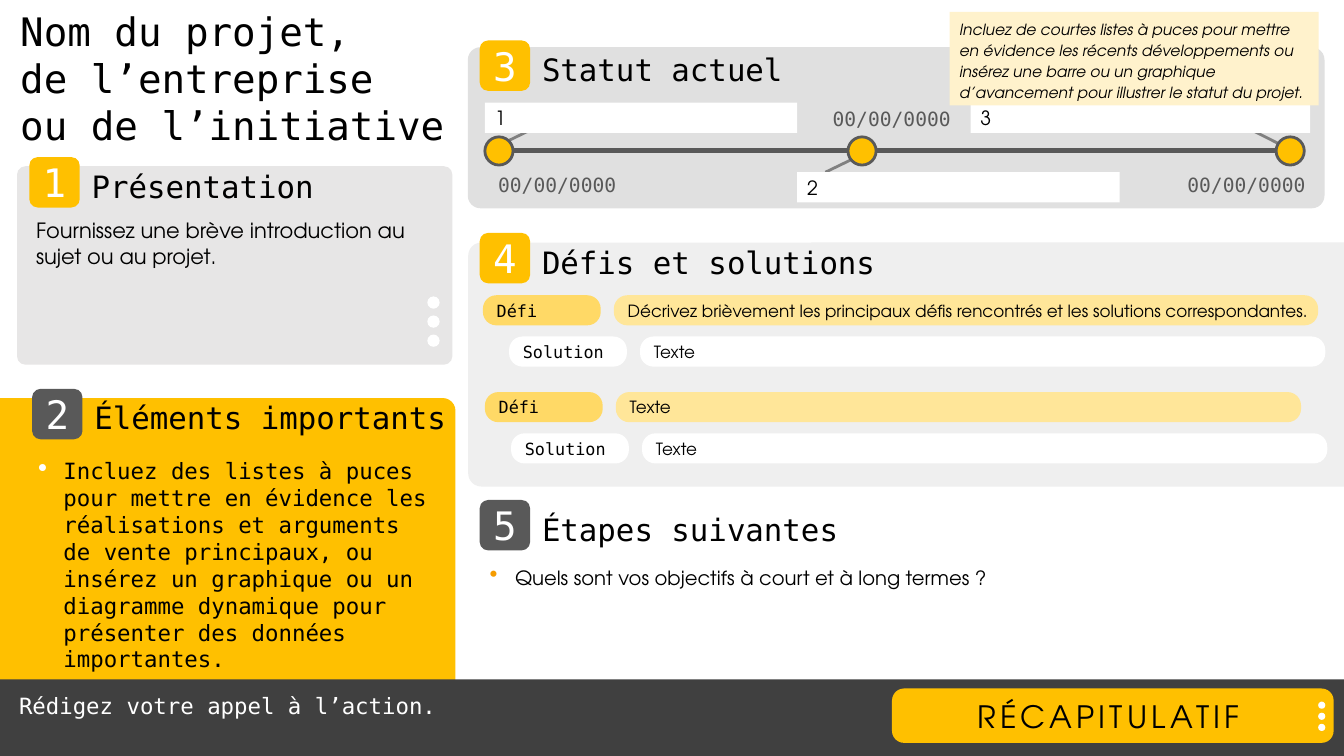
"""Build a one-page project summary slide."""
from lxml.etree import SubElement
from pptx import Presentation
from pptx.dml.color import RGBColor
from pptx.enum.shapes import MSO_CONNECTOR, MSO_SHAPE
from pptx.enum.text import MSO_ANCHOR, MSO_AUTO_SIZE, PP_ALIGN
from pptx.oxml.ns import qn
from pptx.util import Cm, Pt

MONO, SANS = "DejaVu Sans Mono", "TeX Gyre Adventor"
COLORS = {
    "black": "000000", "white": "FFFFFF", "yellow": "FFC000", "amber": "FFD966",
    "pale": "FFE699", "cream": "FFF2CC", "orange": "F59C00", "slate": "595959",
    "footer": "404040", "leader": "808080", "intro": "E7E6E6", "status": "E0E0E0",
    "challenges": "EFEFEF",
}
TITLE = "Nom du projet,\vde l’entreprise\vou de l’initiative"
INTRO = "Fournissez une brève introduction au sujet ou au projet."
HIGHLIGHT = ("Incluez des listes à puces pour mettre en évidence les réalisations et "
             "arguments de vente principaux, ou insérez un graphique ou un diagramme "
             "dynamique pour présenter des données importantes.")
NOTE = ("Incluez de courtes listes à puces pour mettre en évidence les récents "
        "développements ou insérez une barre ou un graphique d’avancement pour "
        "illustrer le statut du projet.")
NEXT_STEP = "Quels sont vos objectifs à court et à long termes ?"
CALL = "Rédigez votre appel à l’action."
BUTTON = "RÉCAPITULATIF"
DATE = "00/00/0000"
SECTIONS = [
    ("Présentation", 0.74, 3.96, "yellow"),
    ("Éléments importants", 0.81, 9.8, "slate"),
    ("Statut actuel", 12.09, 1.02, "yellow"),
    ("Défis et solutions", 12.09, 5.87, "yellow"),
    ("Étapes suivantes", 12.09, 12.6, "slate"),
]
MILESTONES = [
    {"label": "1", "x": 12.57, "box": (12.22, 2.59, 7.87, 0.76),
     "date": (12.09, 4.24), "leader": (12.37, 3.76, 13.36, 3.28)},
    {"label": "2", "x": 21.72, "box": (20.09, 4.34, 8.13, 0.76),
     "date": (20.52, 2.57), "leader": (20.8, 4.34, 21.79, 3.86)},
    {"label": "3", "x": 32.51, "box": (24.46, 2.59, 8.56, 0.76),
     "date": (29.46, 4.24), "leader": (32.54, 3.78, 31.55, 3.28)},
]
CHALLENGES = [
    (12.17, 7.44, 17.75, "Décrivez brièvement les principaux défis rencontrés et les "
                         "solutions correspondantes.", "Texte"),
    (12.22, 9.88, 17.27, "Texte", "Texte"),
]
DOTS = [(10.77, 7.47, 0.48, 0.31), (33.22, 17.68, 0.28, 0.18)]


def rgb(name):
    return RGBColor.from_string(COLORS[name])


def write(sp, text, font=MONO, size=14, color="black", align=PP_ALIGN.LEFT,
          anchor=MSO_ANCHOR.TOP, insets=(0.25, 0.13, 0.25, 0.13), italic=False,
          spacing=None, line=None, bullet=None):
    tf = sp.text_frame
    tf.word_wrap = True
    tf.auto_size = MSO_AUTO_SIZE.NONE
    tf.vertical_anchor = anchor
    tf.margin_left, tf.margin_top, tf.margin_right, tf.margin_bottom = map(Cm, insets)
    p = tf.paragraphs[0]
    p.text = text
    p.alignment = align
    if line:
        p.line_spacing = line
    for r in p.runs:
        r.font.name, r.font.size, r.font.italic = font, Pt(size), italic
        r.font.color.rgb = rgb(color)
        if spacing:
            r.font._element.set("spc", str(spacing * 100))
    if bullet:
        p.space_after = Pt(6)
        pPr = p._p.get_or_add_pPr()
        pPr.set("marL", str(Cm(0.64)))
        pPr.set("indent", str(-Cm(0.64)))
        clr = SubElement(pPr, qn("a:buClr"))
        SubElement(clr, qn("a:srgbClr")).set("val", COLORS[bullet])
        SubElement(pPr, qn("a:buSzPct")).set("val", "120000")
        SubElement(pPr, qn("a:buChar")).set("char", "•")


def add_shape(s, kind, at, fill, adj=None, outline=None):
    sp = s.shapes.add_shape(kind, *map(Cm, at))
    sp.shadow.inherit = False
    sp.fill.solid()
    sp.fill.fore_color.rgb = rgb(fill)
    if outline:
        sp.line.color.rgb = rgb(outline)
        sp.line.width = Pt(2)
    else:
        sp.line.fill.background()
    if adj is not None:
        sp.adjustments[0] = adj
    return sp


def add_text(s, at, text, **fmt):
    write(s.shapes.add_textbox(*map(Cm, at)), text, **fmt)


def add_line(s, ends, color, width):
    c = s.shapes.add_connector(MSO_CONNECTOR.STRAIGHT, *map(Cm, ends))
    c.line.color.rgb = rgb(color)
    c.line.width = Pt(width)
    SubElement(c._element.spPr, qn("a:effectLst"))


def add_panels(s):
    sp = add_shape(s, MSO_SHAPE.ROUND_2_SAME_RECTANGLE, (19.76, -1.85, 6.15, 22.07),
                   "challenges", 0.054)
    sp.rotation = 270
    round_rect = MSO_SHAPE.ROUNDED_RECTANGLE
    add_shape(s, round_rect, (11.79, 1.19, 21.59, 4.06), "status", 0.079)
    add_shape(s, MSO_SHAPE.ROUND_1_RECTANGLE, (0, 10.03, 11.48, 9.02), "yellow", 0.036)
    add_shape(s, round_rect, (0.43, 4.19, 10.97, 5), "intro", 0.042)
    add_shape(s, MSO_SHAPE.RECTANGLE, (0, 17.12, 33.87, 1.93), "footer")
    add_shape(s, round_rect, (22.48, 17.35, 11.13, 1.37), "yellow", 0.221)
    for x, y, step, size in DOTS:
        for i in range(3):
            add_shape(s, MSO_SHAPE.OVAL, (x, y + i * step, size, size), "white")


def add_sections(s):
    for number, (name, x, y, fill) in enumerate(SECTIONS, 1):
        sp = add_shape(s, MSO_SHAPE.ROUNDED_RECTANGLE, (x, y, 1.27, 1.27), fill)
        write(sp, str(number), size=28, color="white", align=PP_ALIGN.CENTER,
              anchor=MSO_ANCHOR.MIDDLE, insets=(0, 0, 0, 0), spacing=-3)
        add_text(s, (x + 1.57, y + 0.27, 10, 0.91), name, size=22,
                 anchor=MSO_ANCHOR.MIDDLE, insets=(0, 0, 0, 0))


def add_timeline(s):
    for m in MILESTONES:
        add_line(s, m["leader"], "leader", 2)
    add_line(s, (12.55, 3.79, 32.77, 3.79), "slate", 4)
    for m in MILESTONES:
        add_shape(s, MSO_SHAPE.OVAL, (m["x"] - 0.35, 3.45, 0.71, 0.71), "yellow",
                  outline="slate")
        add_text(s, (*m["date"], 3.91, 0.86), DATE, color="slate",
                 align=PP_ALIGN.CENTER)
        sp = add_shape(s, MSO_SHAPE.RECTANGLE, m["box"], "white")
        write(sp, m["label"], font=SANS, anchor=MSO_ANCHOR.MIDDLE,
              insets=(0.25, 0, 0.25, 0))


def add_challenges(s):
    for x, y, width, challenge, solution in CHALLENGES:
        pills = [
            (x, y, 2.97, "Défi", "amber", MONO),
            (x + 3.3, y, width, challenge, "pale", SANS),
            (x + 0.66, y + 1.04, 2.97, "Solution", "white", MONO),
            (x + 3.96, y + 1.04, 17.27, solution, "white", SANS),
        ]
        for left, top, w, text, fill, font in pills:
            sp = add_shape(s, MSO_SHAPE.ROUNDED_RECTANGLE, (left, top, w, 0.76), fill, 0.448)
            write(sp, text, font=font, size=12, anchor=MSO_ANCHOR.MIDDLE,
                  insets=(0.25, 0, 0, 0))


def main():
    prs = Presentation()
    prs.slide_width, prs.slide_height = Cm(33.87), Cm(19.05)
    s = prs.slides.add_slide(prs.slide_layouts[5])
    title = s.shapes.title
    title.left, title.top, title.width, title.height = map(Cm, (0.51, 0.18, 10.8, 3.2))
    write(title, TITLE, size=28, insets=(0, 0, 0, 0))
    add_panels(s)
    add_sections(s)
    add_text(s, (0.66, 5.36, 9.88, 1.55), INTRO, font=SANS, size=15)
    add_text(s, (0.71, 11.4, 10.44, 4.37), HIGHLIGHT, size=16, bullet="white")
    add_timeline(s)
    add_challenges(s)
    add_text(s, (12.09, 14.12, 21.46, 0.86), NEXT_STEP, font=SANS, bullet="orange")
    add_text(s, (0.23, 17.3, 21.23, 0.94), CALL, size=16, color="white")
    add_text(s, (22.48, 17.45, 10.92, 1.19), BUTTON, font=SANS, size=22,
             align=PP_ALIGN.CENTER, spacing=3)
    note = add_shape(s, MSO_SHAPE.RECTANGLE, (23.93, 0.3, 9.3, 2.36), "cream")
    write(note, NOTE, font=SANS, size=11, italic=True, line=1.15)
    prs.save("out.pptx")


if __name__ == "__main__":
    main()
